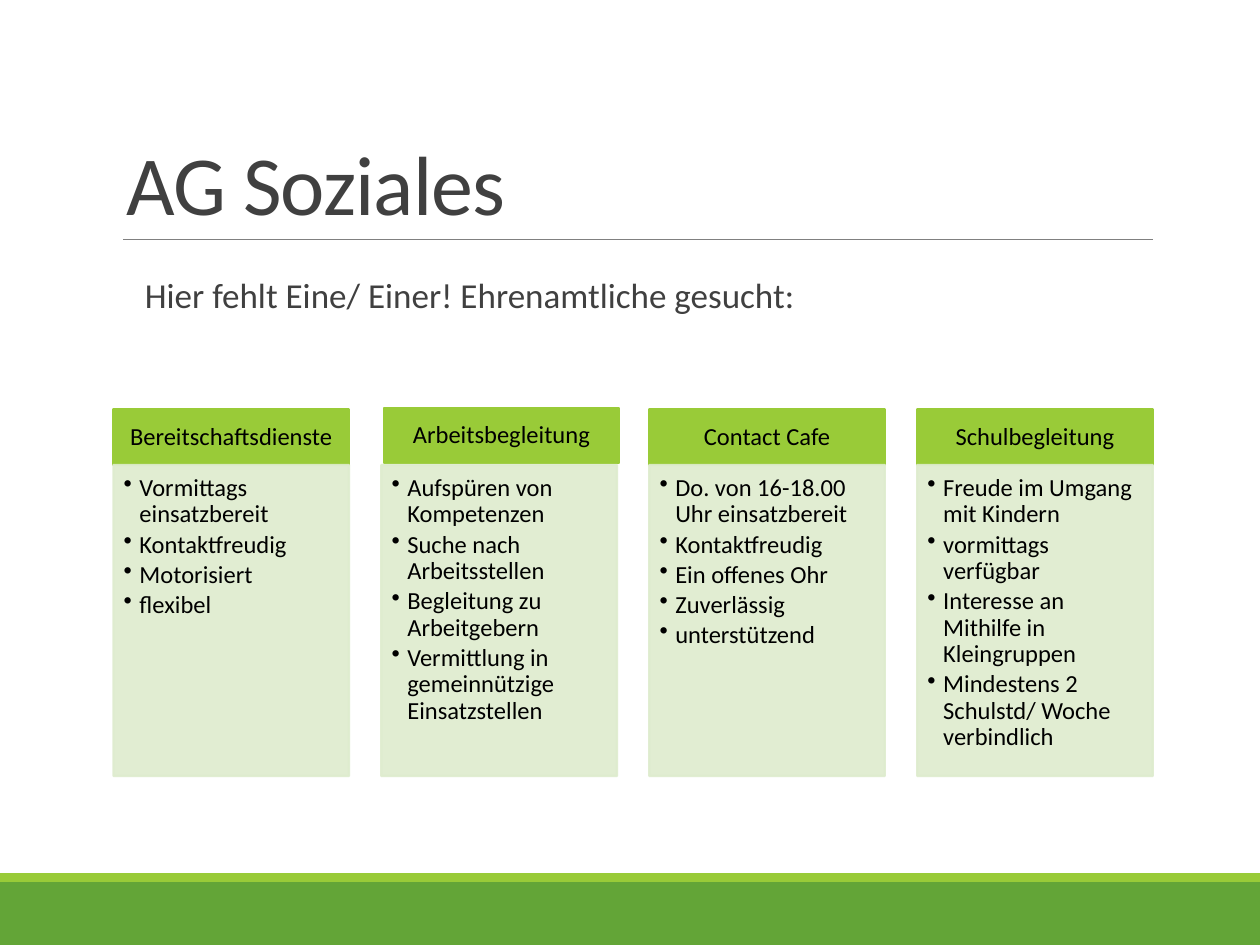
from lxml.etree import SubElement
from pptx import Presentation
from pptx.dml.color import RGBColor
from pptx.enum.shapes import MSO_CONNECTOR, MSO_SHAPE
from pptx.enum.text import MSO_ANCHOR as ANCHOR, MSO_AUTO_SIZE, PP_ALIGN as ALIGN
from pptx.oxml.ns import qn
from pptx.util import Pt

GREEN = RGBColor(0x63, 0xA5, 0x37)
LIME = RGBColor(0x99, 0xCB, 0x38)
PALE = RGBColor(0xDE, 0xEC, 0xCE)
GREY = RGBColor(0x80, 0x80, 0x80)
DARK = RGBColor(0x40, 0x40, 0x40)
BLACK = RGBColor(0, 0, 0)

WIDTH, HEIGHT = 720, 540
LEFT, CONTENT_W = 64.8, 594
CARD_W = 134.7
STEP = (CONTENT_W - CARD_W) / 3
HEAD_TOP, HEAD_H = 234, 31.7
BODY_TOP, BODY_H = 265.7, 177.8

CARDS = [
    ("Bereitschaftsdienste",
     ["Vormittags einsatzbereit", "Kontaktfreudig", "Motorisiert", "flexibel"]),
    ("Arbeitsbegleitung",
     ["Aufspüren von Kompetenzen", "Suche nach Arbeitsstellen",
      "Begleitung zu Arbeitgebern",
      "Vermittlung in gemeinnützige Einsatzstellen"]),
    ("Contact Cafe",
     ["Do. von 16-18.00 Uhr einsatzbereit", "Kontaktfreudig",
      "Ein offenes Ohr", "Zuverlässig", "unterstützend"]),
    ("Schulbegleitung",
     ["Freude im Umgang mit Kindern", "vormittags verfügbar",
      "Interesse an Mithilfe in Kleingruppen",
      "Mindestens 2 Schulstd/ Woche verbindlich"]),
]
HEAD_SHIFT = {"Arbeitsbegleitung": (1.4, -0.9)}


class Deck:
    """Holds the text style and the current slide."""

    font = "Calibri"

    def __init__(self, slide):
        self.slide = slide

    def set_text(self, sp, lines, size, color, insets, anchor=ANCHOR.TOP,
                 align=ALIGN.LEFT, spacing=0.9, after=0, indent=0,
                 bullet=False):
        tf = sp.text_frame
        tf.word_wrap = True
        tf.auto_size = MSO_AUTO_SIZE.NONE
        tf.vertical_anchor = anchor
        (tf.margin_left, tf.margin_top,
         tf.margin_right, tf.margin_bottom) = map(Pt, insets)
        tf.text = "\n".join(lines)
        for p in tf.paragraphs:
            p.alignment = align
            p.line_spacing = spacing
            p.space_before, p.space_after = Pt(0), Pt(after)
            pPr = p._p.get_or_add_pPr()
            pPr.set("marL", str(Pt(indent)))
            pPr.set("indent", str(-Pt(indent) if bullet else 0))
            if bullet:
                SubElement(pPr, qn("a:buChar")).set("char", "•")
            for r in p.runs:
                r.font.name, r.font.size = self.font, Pt(size)
                r.font.color.rgb = color

    def title(self, text, x, y, w, h):
        sp = self.slide.shapes.title
        sp.left, sp.top, sp.width, sp.height = map(Pt, (x, y, w, h))
        self.set_text(sp, [text], 48, DARK, (7.2, 3.6, 7.2, 3.6),
                      anchor=ANCHOR.BOTTOM, spacing=0.85)
        for r in sp.text_frame.paragraphs[0].runs:
            r._r.get_or_add_rPr().set("spc", "-50")

    def box(self, x, y, w, h, color, border=0, opacity=100):
        sp = self.slide.shapes.add_shape(
            MSO_SHAPE.RECTANGLE, *map(Pt, (x, y, w, h)))
        sp.shadow.inherit = False
        sp.fill.solid()
        sp.fill.fore_color.rgb = color
        if border:
            sp.line.color.rgb = color
            sp.line.width = Pt(border)
        else:
            sp.line.fill.background()
        if opacity < 100:
            for clr in sp._element.spPr.iter(qn("a:srgbClr")):
                SubElement(clr, qn("a:alpha")).set("val", str(opacity * 1000))
        return sp

    def rule(self, x1, x2, y):
        line = self.slide.shapes.add_connector(
            MSO_CONNECTOR.STRAIGHT, Pt(x1), Pt(y), Pt(x2), Pt(y))
        line.line.color.rgb = GREY
        line.line.width = Pt(0.5)
        SubElement(line._element.spPr, qn("a:effectLst"))

    def text(self, text, x, y, w, h, indent):
        sp = self.slide.shapes.add_textbox(*map(Pt, (x, y, w, h)))
        self.set_text(sp, [text], 20, DARK, (0, 3.6, 0, 3.6), after=2,
                      indent=indent)

    def card(self, x, heading, points):
        dx, dy = HEAD_SHIFT.get(heading, (0, 0))
        head = self.box(x + dx, HEAD_TOP + dy, CARD_W, HEAD_H, LIME, 1.25)
        self.set_text(head, [heading], 14, BLACK, (7.9, 4.5, 7.9, 4.5),
                      anchor=ANCHOR.MIDDLE, align=ALIGN.CENTER)
        body = self.box(x, BODY_TOP, CARD_W, BODY_H, PALE, 1.25, opacity=90)
        self.set_text(body, points, 14, BLACK, (5.9, 5.9, 7.9, 8.9),
                      after=2.1, indent=9, bullet=True)


def main():
    prs = Presentation()
    prs.slide_width, prs.slide_height = Pt(WIDTH), Pt(HEIGHT)
    deck = Deck(prs.slides.add_slide(prs.slide_layouts[5]))
    deck.box(0, 504, WIDTH, 36, GREEN)
    deck.box(0, 499, WIDTH, 5, LIME)
    deck.rule(70.4, LEFT + CONTENT_W, 136.8)
    deck.title("AG Soziales", LEFT, 22.6, CONTENT_W, 114.2)
    for i, (heading, points) in enumerate(CARDS):
        deck.card(LEFT + i * STEP, heading, points)
    deck.text("Hier fehlt Eine/ Einer! Ehrenamtliche gesucht:",
              LEFT, 155.5, CONTENT_W, 314.6, indent=18)
    prs.save("out.pptx")


if __name__ == "__main__":
    main()
